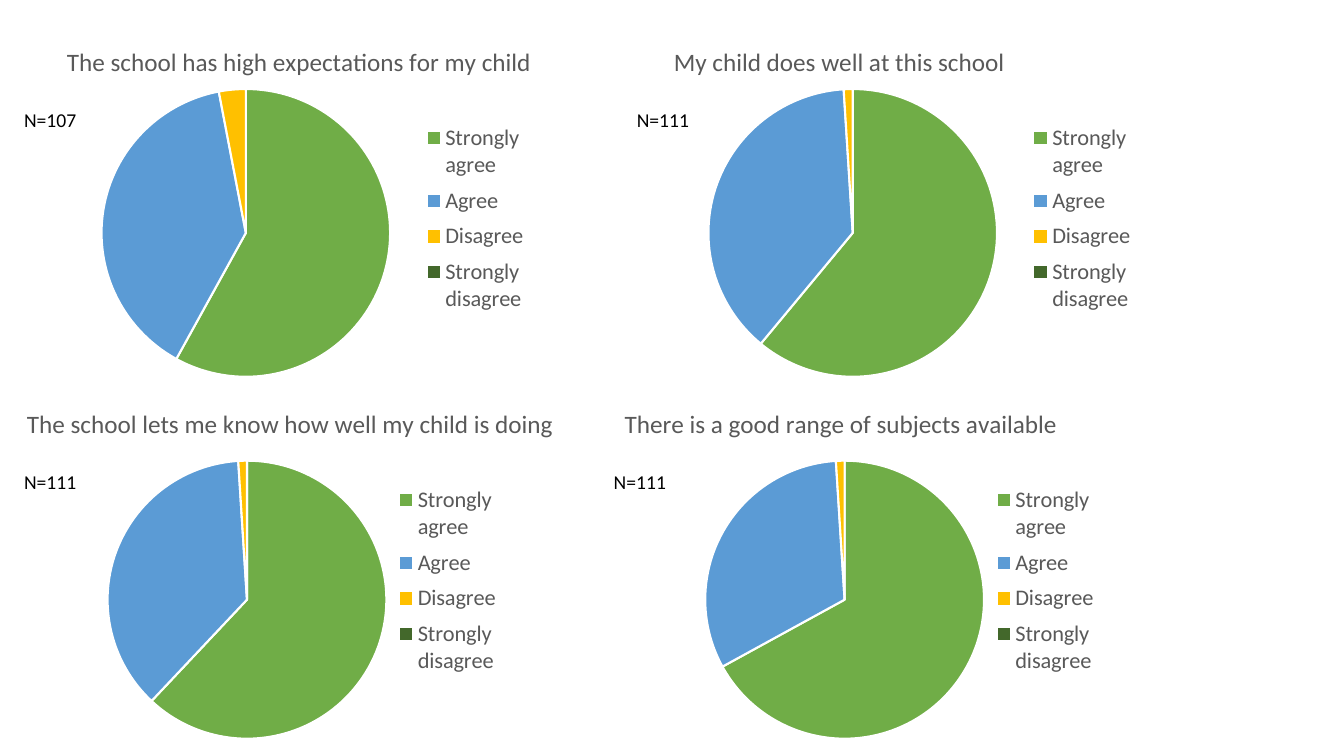
from pptx import Presentation
from pptx.chart.data import CategoryChartData
from pptx.dml.color import RGBColor
from pptx.enum.chart import XL_CHART_TYPE, XL_LEGEND_POSITION
from pptx.enum.text import MSO_AUTO_SIZE
from pptx.oxml import parse_xml
from pptx.oxml.ns import nsdecls, qn
from pptx.util import Pt

PIE = XL_CHART_TYPE.PIE
BOTTOM = XL_LEGEND_POSITION.BOTTOM
GROW = MSO_AUTO_SIZE.SHAPE_TO_FIT_TEXT

FONT = "Calibri"
BLACK = RGBColor(0x00, 0x00, 0x00)
WHITE = RGBColor(0xFF, 0xFF, 0xFF)
GREY = RGBColor(0x59, 0x59, 0x59)
GREEN = RGBColor(0x70, 0xAD, 0x47)
BLUE = RGBColor(0x5B, 0x9B, 0xD5)
AMBER = RGBColor(0xFF, 0xC0, 0x00)
DARK_GREEN = RGBColor(0x43, 0x68, 0x2B)

ANSWERS = {
    "Strongly agree": GREEN,
    "Agree": BLUE,
    "Disagree": AMBER,
    "Strongly disagree": DARK_GREEN,
}
CHART_HEIGHT = 249
TITLE_PLACE = {"x": 0.2, "y": 0.03}
LEGEND_PLACE = {"x": 0.7, "y": 0.25, "w": 0.17, "h": 0.59}

# Each row: chart top, chart width, label top, place of the pie in the chart
TOP_ROW = (20.9, 504, 73.4, {"x": 0.253, "y": 0.172, "w": 0.414, "h": 0.828})
BOTTOM_ROW = (279.4, 519.1, 331.9, {"x": 0.317, "y": 0.2, "w": 0.384, "h": 0.8})

# Each question: row, chart left, label left, number of replies, title, percentages
QUESTIONS = [
    (TOP_ROW, -56.2, 10.1, 107,
     "The school has high expectations for my child", (58, 39, 3, 0)),
    (TOP_ROW, 377.3, 447.8, 111,
     "My child does well at this school", (61, 38, 1, 0)),
    (BOTTOM_ROW, -87.8, 10.1, 111,
     "The school lets me know how well my child is doing", (62, 37, 1, 0)),
    (BOTTOM_ROW, 339.1, 431.3, 111,
     "There is a good range of subjects available", (67, 32, 1, 0)),
]


def format_font(font, size, color):
    font.name = FONT
    font.size = Pt(size)
    font.bold = False
    font.color.rgb = color


def place_part(part, place, follows=None, inner=False):
    """Give a chart part a manual layout, as fractions of the chart."""
    for old in part.findall(qn("c:layout")):
        part.remove(old)
    target = '<c:layoutTarget val="inner"/>' if inner else ""
    modes = "".join(f'<c:{key}Mode val="edge"/>' for key in "xy")
    values = "".join(f'<c:{key} val="{value}"/>' for key, value in place.items())
    layout = parse_xml(
        f'<c:layout {nsdecls("c")}><c:manualLayout>'
        f"{target}{modes}{values}</c:manualLayout></c:layout>"
    )
    if follows is None:
        part.insert(0, layout)
    else:
        part.find(qn(follows)).addnext(layout)


def add_pie(slide, left, top, width, pie_place, title, percentages):
    data = CategoryChartData()
    data.categories = list(ANSWERS)
    data.add_series("Series 1", percentages)
    chart = slide.shapes.add_chart(
        PIE, Pt(left), Pt(top), Pt(width), Pt(CHART_HEIGHT), data
    ).chart
    format_font(chart.font, 10, BLACK)

    chart.has_title = True
    para = chart.chart_title.text_frame.paragraphs[0]
    para.text = title
    format_font(para.font, 18, GREY)
    place_part(chart.chart_title._element, TITLE_PLACE, follows="c:tx")

    chart.has_legend = True
    chart.legend.position = BOTTOM
    chart.legend.include_in_layout = False
    format_font(chart.legend.font, 16, GREY)
    place_part(chart.legend._element, LEGEND_PLACE, follows="c:legendPos")

    plot = chart.plots[0]
    plot.vary_by_categories = True
    place_part(plot._element.getparent(), pie_place, inner=True)
    for index, color in enumerate(ANSWERS.values()):
        slice_format = plot.series[0].points[index].format
        slice_format.fill.solid()
        slice_format.fill.fore_color.rgb = color
        slice_format.line.color.rgb = WHITE
        slice_format.line.width = Pt(1.5)


def add_label(slide, left, top, text):
    box = slide.shapes.add_textbox(Pt(left), Pt(top), Pt(68.4), Pt(24.5))
    frame = box.text_frame
    frame.word_wrap = True
    frame.auto_size = GROW
    para = frame.paragraphs[0]
    para.text = text
    format_font(para.font, 14, BLACK)


def main():
    deck = Presentation()
    deck.slide_width, deck.slide_height = Pt(960), Pt(540)
    slide = deck.slides.add_slide(deck.slide_layouts[6])
    for row, chart_left, label_left, replies, title, percentages in QUESTIONS:
        chart_top, chart_width, label_top, pie_place = row
        add_pie(slide, chart_left, chart_top, chart_width, pie_place, title, percentages)
        add_label(slide, label_left, label_top, f"N={replies}")
    deck.save("out.pptx")


if __name__ == "__main__":
    main()
